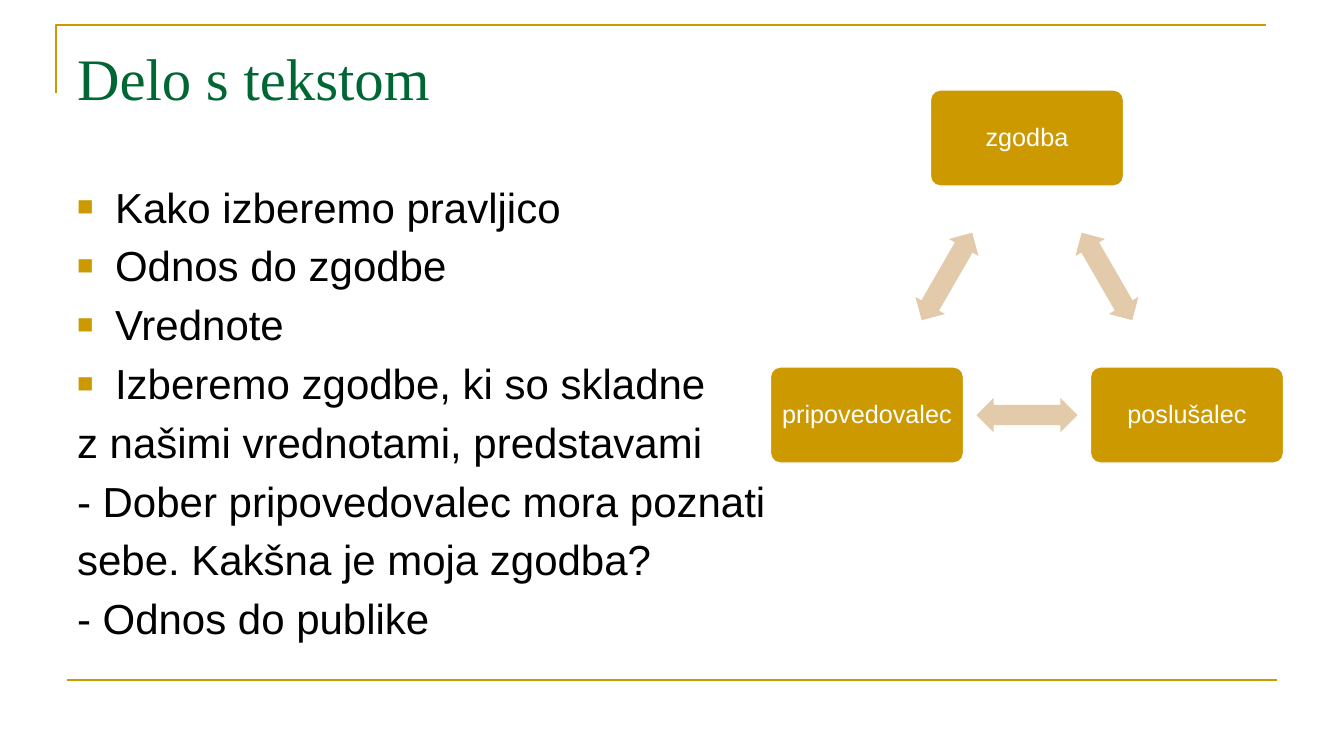
from dataclasses import dataclass
from math import atan2, degrees

from lxml.etree import SubElement
from pptx import Presentation
from pptx.dml.color import RGBColor
from pptx.enum.shapes import MSO_CONNECTOR as Connector, MSO_SHAPE as Shape
from pptx.enum.text import MSO_ANCHOR as Anchor, MSO_AUTO_SIZE as AutoSize, PP_ALIGN as Align
from pptx.oxml.ns import qn
from pptx.util import Pt

TITLE = "Delo s tekstom"
BULLETS = [
    "Kako izberemo pravljico",
    "Odnos do zgodbe",
    "Vrednote",
    "Izberemo zgodbe, ki so skladne",
]
PLAIN_LINES = [
    "z našimi vrednotami, predstavami",
    "- Dober pripovedovalec mora poznati",
    "sebe. Kakšna je moja zgodba?",
    "- Odnos do publike",
]
TRIANGLE = [
    ("zgodba", (1027, 138)),
    ("poslušalec", (1187, 415)),
    ("pripovedovalec", (867, 415)),
]
NODE_SIZE = (193, 96)
ARROW_SIZE = (101, 34)
CORNER = [(56, 93), (56, 25), (1266, 25)]
FOOT_RULE = (67, 680, 1277, 680)
TITLE_BOX = (67, 30, 1210, 126)
BODY_BOX = (67, 176, 1210, 499)
BULLET_INDENT = 38


@dataclass(frozen=True)
class Theme:
    gold: str = "CC9900"
    sand: str = "E2CAAB"
    green: str = "006633"
    black: str = "000000"
    white: str = "FFFFFF"
    serif: str = "Times New Roman"
    sans: str = "Arial"
    title_size: int = 42
    body_size: int = 30
    node_size: int = 18
    rule_width: float = 1.5
    node_line: float = 1


THEME = Theme()
SCALE = 914400 / 100.8


def px(value):
    return round(value * SCALE)


def color(code):
    return RGBColor.from_string(code)


def place(shape, box):
    shape.left, shape.top, shape.width, shape.height = map(px, box)


def style_line(shape, code, width):
    shape.line.color.rgb = color(code)
    shape.line.width = Pt(width)


def add_run(paragraph, text, font_name, size, code):
    run = paragraph.add_run()
    run.text = text
    run.font.name = font_name
    run.font.size = Pt(size)
    run.font.color.rgb = color(code)


def format_body_paragraph(paragraph, bulleted):
    properties = paragraph._p.get_or_add_pPr()
    indent = px(BULLET_INDENT) if bulleted else 0
    properties.set("marL", str(indent))
    properties.set("indent", str(-indent))
    spacing = SubElement(properties, qn("a:spcBef"))
    SubElement(spacing, qn("a:spcPct"), val="20000")
    if not bulleted:
        SubElement(properties, qn("a:buNone"))
        return
    bullet_color = SubElement(properties, qn("a:buClr"))
    SubElement(bullet_color, qn("a:srgbClr"), val=THEME.gold)
    SubElement(properties, qn("a:buSzPct"), val="65000")
    SubElement(properties, qn("a:buFont"), typeface=THEME.sans)
    SubElement(properties, qn("a:buChar"), char="■")


def add_rules(slide):
    builder = slide.shapes.build_freeform(*CORNER[0], scale=SCALE)
    builder.add_line_segments(CORNER[1:], close=False)
    corner = builder.convert_to_shape()
    corner.shadow.inherit = False
    corner.fill.background()
    foot = slide.shapes.add_connector(Connector.STRAIGHT, *map(px, FOOT_RULE))
    SubElement(foot._element.spPr, qn("a:effectLst"))
    for rule in (corner, foot):
        style_line(rule, THEME.gold, THEME.rule_width)


def fill_title(title):
    place(title, TITLE_BOX)
    frame = title.text_frame
    frame.auto_size = AutoSize.NONE
    frame.vertical_anchor = Anchor.TOP
    frame.margin_top = px(12)
    paragraph = frame.paragraphs[0]
    paragraph.alignment = Align.LEFT
    add_run(paragraph, TITLE, THEME.serif, THEME.title_size, THEME.green)


def fill_body(body):
    place(body, BODY_BOX)
    frame = body.text_frame
    frame.auto_size = AutoSize.NONE
    frame.vertical_anchor = Anchor.TOP
    for index, text in enumerate(BULLETS + PLAIN_LINES):
        paragraph = frame.add_paragraph() if index else frame.paragraphs[0]
        format_body_paragraph(paragraph, index < len(BULLETS))
        add_run(paragraph, text, THEME.sans, THEME.body_size, THEME.black)


def add_centered(slide, kind, center, size, fill, adjustments):
    left, top = (middle - length / 2 for middle, length in zip(center, size))
    shape = slide.shapes.add_shape(kind, *map(px, (left, top, *size)))
    shape.shadow.inherit = False
    shape.fill.solid()
    shape.fill.fore_color.rgb = color(fill)
    for index, value in enumerate(adjustments):
        shape.adjustments[index] = value
    return shape


def add_node(slide, text, center):
    node = add_centered(slide, Shape.ROUNDED_RECTANGLE, center, NODE_SIZE, THEME.gold, [0.1])
    style_line(node, THEME.white, THEME.node_line)
    frame = node.text_frame
    frame.word_wrap = True
    frame.vertical_anchor = Anchor.MIDDLE
    frame.margin_left = frame.margin_right = px(7)
    frame.margin_top = frame.margin_bottom = px(7)
    paragraph = frame.paragraphs[0]
    paragraph.alignment = Align.CENTER
    paragraph.line_spacing = 0.9
    add_run(paragraph, text, THEME.sans, THEME.node_size, THEME.white)


def add_arrow(slide, start, end):
    center = [(a + b) / 2 for a, b in zip(start, end)]
    arrow = add_centered(slide, Shape.LEFT_RIGHT_ARROW, center, ARROW_SIZE, THEME.sand, [0.6, 0.5])
    arrow.line.fill.background()
    arrow.rotation = round(degrees(atan2(end[1] - start[1], end[0] - start[0]))) % 360


def add_triangle(slide):
    for index, (text, center) in enumerate(TRIANGLE):
        following = TRIANGLE[(index + 1) % len(TRIANGLE)][1]
        add_node(slide, text, center)
        add_arrow(slide, center, following)


def main():
    presentation = Presentation()
    presentation.slide_width = px(1344)
    presentation.slide_height = px(756)
    slide = presentation.slides.add_slide(presentation.slide_layouts[1])
    add_rules(slide)
    fill_title(slide.shapes.title)
    fill_body(slide.placeholders[1])
    add_triangle(slide)
    presentation.save("out.pptx")


if __name__ == "__main__":
    main()
